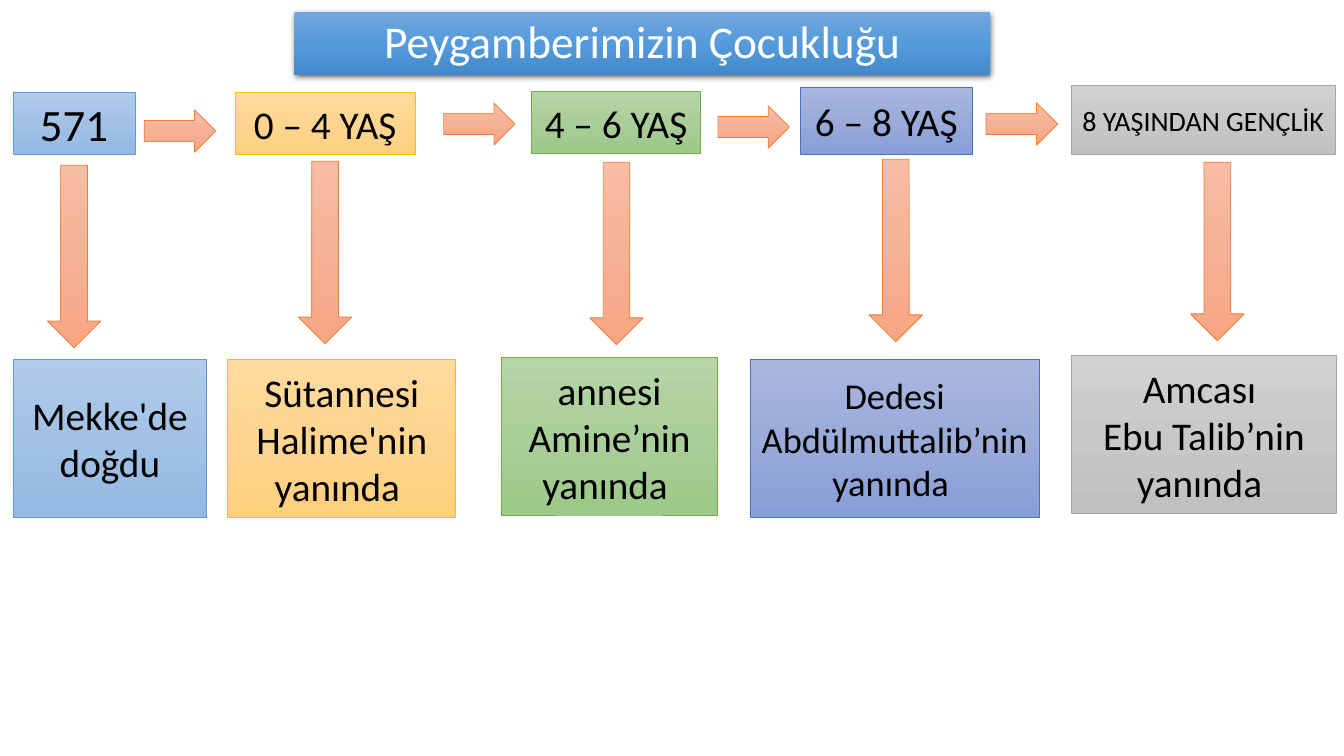
import copy
from dataclasses import dataclass

import pptx
import pptx.dml.color
import pptx.enum.shapes
import pptx.enum.text
import pptx.oxml
import pptx.oxml.ns
import pptx.util

Inches = pptx.util.Inches
Kind = pptx.enum.shapes.MSO_SHAPE


@dataclass(frozen=True)
class Theme:
    font: str = "Calibri"
    white: str = "FFFFFF"
    black: str = "000000"
    head: float = 32.4
    year: float = 32
    body: float = 28
    tight: float = 26
    small: float = 20
    edge: float = 0.5
    # Each tone: top, middle and bottom of the gradient, then the outline
    title: tuple = ("71A6DB", "559BDB", "448ACA", None)
    arrow: tuple = ("F7BDA5", "F5B196", "F8A582", "ED7D31")
    blue: tuple = ("B1CBE9", "A3C1E5", "93B9E4", "5B9BD5")
    gold: tuple = ("FFDB9E", "FFD590", "FFD07C", "FFC000")
    green: tuple = ("B5D5A7", "AACE9A", "9CC987", "70AD47")
    navy: tuple = ("A8B7DF", "9AABD9", "889ED7", "4472C4")
    gray: tuple = ("D2D2D2", "C8C8C8", "C0C0C0", "A5A5A5")


def rgb(code):
    return pptx.dml.color.RGBColor.from_string(code)


class Board:
    def __init__(self, slide, theme):
        self.slide = slide
        self.theme = theme

    def paint(self, shape, tone):
        """Fill with a three-stop vertical gradient and draw the outline."""
        *stops, edge = tone
        shape.fill.gradient()
        shape.fill.gradient_angle = 270
        items = shape._element.spPr.find(".//" + pptx.oxml.ns.qn("a:gsLst"))
        items.append(copy.deepcopy(items[-1]))
        for i, (stop, code) in enumerate(zip(shape.fill.gradient_stops, stops)):
            stop.position = i / 2
            stop.color.rgb = rgb(code)
        if edge:
            shape.line.color.rgb = rgb(edge)
            shape.line.width = pptx.util.Pt(self.theme.edge)

    def label(self, shape, lines, size, color):
        frame = shape.text_frame
        frame.word_wrap = True
        frame.auto_size = pptx.enum.text.MSO_AUTO_SIZE.NONE
        frame.vertical_anchor = pptx.enum.text.MSO_ANCHOR.MIDDLE
        for i, line in enumerate(lines):
            para = frame.add_paragraph() if i else frame.paragraphs[0]
            para.alignment = pptx.enum.text.PP_ALIGN.CENTER
            run = para.add_run()
            run.text = line
            run.font.name = self.theme.font
            run.font.size = pptx.util.Pt(size)
            run.font.color.rgb = rgb(color)

    def title(self, text, x, y, w, h):
        shape = self.slide.shapes.title
        shape.left, shape.top = Inches(x), Inches(y)
        shape.width, shape.height = Inches(w), Inches(h)
        self.paint(shape, self.theme.title)
        self.label(shape, [text], self.theme.head, self.theme.white)
        shape.text_frame.paragraphs[0].line_spacing = 0.9
        shape._element.spPr.append(pptx.oxml.parse_xml(
            f'<a:effectLst {pptx.oxml.ns.nsdecls("a")}>'
            '<a:outerShdw blurRad="57150" dist="19050" dir="5400000" '
            'algn="ctr" rotWithShape="0"><a:srgbClr val="000000">'
            '<a:alpha val="63000"/></a:srgbClr></a:outerShdw></a:effectLst>'))

    def block(self, kind, x, y, w, h, tone):
        shape = self.slide.shapes.add_shape(
            kind, Inches(x), Inches(y), Inches(w), Inches(h))
        shape.shadow.inherit = False
        self.paint(shape, tone)
        return shape

    def box(self, lines, size, x, y, w, h, tone):
        shape = self.block(Kind.RECTANGLE, x, y, w, h, tone)
        self.label(shape, lines, size, self.theme.black)

    def down(self, x, y, h):
        self.block(Kind.DOWN_ARROW, x, y, 0.53, h, self.theme.arrow)

    def right(self, x, y):
        self.block(Kind.RIGHT_ARROW, x, y, 0.71, 0.42, self.theme.arrow)


def main():
    deck = pptx.Presentation()
    deck.slide_width, deck.slide_height = Inches(13.33), Inches(7.5)
    theme = Theme()
    board = Board(deck.slides.add_slide(deck.slide_layouts[5]), theme)

    # Heading
    board.title("Peygamberimizin Çocukluğu", 2.92, 0.12, 6.9, 0.62)

    # Stages: tone, age box, down arrow (x, y, height), event box
    stages = [
        (theme.blue, (["571"], theme.year, 0.13, 0.92, 1.21, 0.61),
         (0.47, 1.64, 1.81),
         (["Mekke'de doğdu"], theme.body, 0.13, 3.57, 1.92, 1.56)),
        (theme.gold, (["0 – 4 YAŞ"], theme.body, 2.33, 0.92, 1.79, 0.61),
         (2.96, 1.6, 1.81),
         (["Sütannesi Halime'nin yanında "], theme.body,
          2.26, 3.57, 2.26, 1.56)),
        (theme.green, (["4 – 6 YAŞ"], theme.body, 5.27, 0.91, 1.68, 0.61),
         (5.85, 1.61, 1.81),
         (["annesi Amine’nin yanında "], theme.body,
          4.97, 3.55, 2.15, 1.56)),
        (theme.navy, (["6 – 8 YAŞ"], theme.body, 7.94, 0.87, 1.7, 0.66),
         (8.62, 1.58, 1.81),
         (["Dedesi Abdülmuttalib’nin yanında "], theme.tight,
          7.44, 3.57, 2.87, 1.56)),
        (theme.gray,
         (["8 YAŞINDAN GENÇLİK"], theme.small, 10.63, 0.85, 2.61, 0.68),
         (11.81, 1.61, 1.77),
         (["Amcası ", "Ebu Talib’nin yanında "], theme.body,
          10.63, 3.53, 2.62, 1.56)),
    ]
    for tone, age, arrow, event in stages:
        board.box(*age, tone)
        board.down(*arrow)
        board.box(*event, tone)

    # Arrows from one age to the next
    for x, y in [(1.43, 1.09), (4.4, 1.02), (7.12, 1.05), (9.78, 1.02)]:
        board.right(x, y)

    deck.save("out.pptx")


if __name__ == "__main__":
    main()
